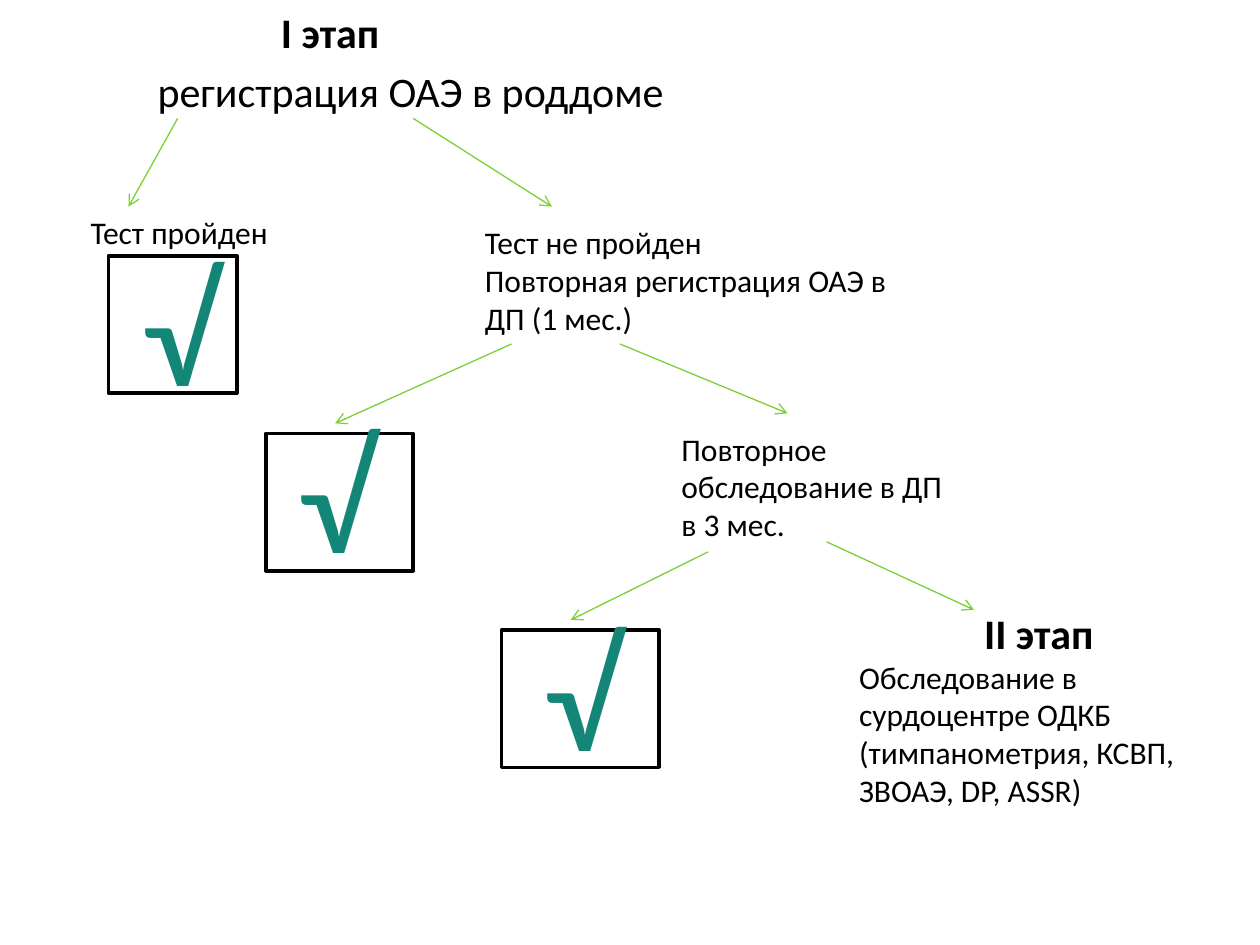
import pptx
import pptx.util
import pptx.dml.color
import pptx.enum.shapes
import pptx.enum.text
import pptx.oxml
import pptx.oxml.ns
import lxml.etree

Inches = pptx.util.Inches
Pt = pptx.util.Pt
RGBColor = pptx.dml.color.RGBColor
Anchor = pptx.enum.text.MSO_ANCHOR
AutoSize = pptx.enum.text.MSO_AUTO_SIZE

BLACK = RGBColor(0x00, 0x00, 0x00)
WHITE = RGBColor(0xFF, 0xFF, 0xFF)
GREEN = RGBColor(0x7C, 0xD0, 0x36)
TEAL = RGBColor(0x13, 0x86, 0x77)
FONT = "Calibri"


def add_child(parent, tag, **attributes):
    child = lxml.etree.SubElement(parent, pptx.oxml.ns.qn(tag))
    for name, value in attributes.items():
        child.set(name, value)
    return child


def format_para(para, size, bold=False, color=BLACK):
    for span in para.runs:
        span.font.name = FONT
        span.font.size = Pt(size)
        span.font.bold = bold
        span.font.color.rgb = color


def place(shape, box):
    shape.left, shape.top, shape.width, shape.height = map(Inches, box)


def fill_heading(page, box):
    """First stage: each line is shifted by its own indent, without bullets."""
    body = page.placeholders[1]
    place(body, box)
    body.text_frame.text = "I этап\nрегистрация ОАЭ в роддоме"
    body.text_frame.auto_size = AutoSize.NONE
    for para, indent, bold in zip(body.text_frame.paragraphs, (1.66, 0.68), (True, False)):
        format_para(para, 24, bold)
        properties = para._p.get_or_add_pPr()
        properties.set("marL", str(Inches(indent)))
        properties.set("indent", "0")
        add_child(properties, "a:buNone")


def add_text(page, box, lines, size=18, color=BLACK, wrap=True):
    label = page.shapes.add_textbox(*map(Inches, box))
    frame = label.text_frame
    frame.word_wrap = wrap
    frame.auto_size = AutoSize.SHAPE_TO_FIT_TEXT
    frame.text = lines
    for para in frame.paragraphs:
        format_para(para, size, color=color)
    return frame


def add_second_stage(page, box):
    frame = add_text(page, box, "II этап\nОбследование в сурдоцентре ОДКБ "
                     "(тимпанометрия, КСВП, ЗВОАЭ, DP, ASSR)")
    heading = frame.paragraphs[0]
    heading.alignment = pptx.enum.text.PP_ALIGN.CENTER
    format_para(heading, 24, bold=True)


def add_frame(page, box):
    square = page.shapes.add_shape(
        pptx.enum.shapes.MSO_SHAPE.RECTANGLE, *map(Inches, box))
    square.shadow.inherit = False
    square.fill.solid()
    square.fill.fore_color.rgb = WHITE
    square.line.color.rgb = BLACK
    square.line.width = Pt(2)
    return square


def add_passed_box(page, box):
    """Square with the check mark as its own text."""
    frame = add_frame(page, box).text_frame
    frame.vertical_anchor = Anchor.MIDDLE
    frame.margin_left, frame.margin_right = Inches(0.27), 0
    frame.text = "√"
    frame.paragraphs[0].alignment = pptx.enum.text.PP_ALIGN.LEFT
    format_para(frame.paragraphs[0], 88, color=TEAL)


def add_arrow(page, start, end):
    arrow = page.shapes.add_connector(
        pptx.enum.shapes.MSO_CONNECTOR.STRAIGHT, *map(Inches, start + end))
    arrow.line.color.rgb = GREEN
    arrow.line.width = Pt(0.75)
    add_child(arrow.line._get_or_add_ln(), "a:tailEnd", type="arrow")
    add_child(arrow._element.spPr, "a:effectLst")


def build_page(page):
    fill_heading(page, (0.47, 0, 9, 6.78))

    # Branches: passed on the left, next step on the right
    for start, end in (
        ((1.41, 0.94), (1.02, 1.64)),
        ((3.28, 0.94), (4.38, 1.64)),
        ((4.06, 2.73), (2.66, 3.36)),
        ((4.92, 2.73), (6.25, 3.28)),
        ((5.62, 4.38), (4.53, 4.92)),
        ((6.56, 4.3), (7.73, 4.84)),
    ):
        add_arrow(page, start, end)

    # Steps of the screening
    add_text(page, (0.62, 1.64, 2.11, 0.4), "Тест пройден")
    add_text(page, (3.75, 1.72, 3.75, 1.01),
             "Тест не пройден\nПовторная регистрация ОАЭ в ДП (1 мес.)")
    add_text(page, (5.31, 3.36, 2.27, 1.01), "Повторное обследование в ДП в 3 мес.")
    add_second_stage(page, (6.72, 4.77, 3.05, 1.72))

    # Passed results
    add_passed_box(page, (0.86, 2.03, 1.02, 1.09))
    for square, mark in (
        ((2.11, 3.44, 1.17, 1.09), (2.27, 3.12, 0.82, 1.58)),
        ((3.98, 5, 1.25, 1.09), (4.22, 4.69, 0.82, 1.58)),
    ):
        add_frame(page, square)
        add_text(page, mark, "√", 88, TEAL, wrap=False)


def main():
    deck = pptx.Presentation()
    deck.slide_width, deck.slide_height = Inches(10), Inches(7.5)
    page = deck.slides.add_slide(deck.slide_layouts[1])
    title = page.shapes.title._element
    title.getparent().remove(title)
    build_page(page)
    deck.save("out.pptx")


if __name__ == "__main__":
    main()
